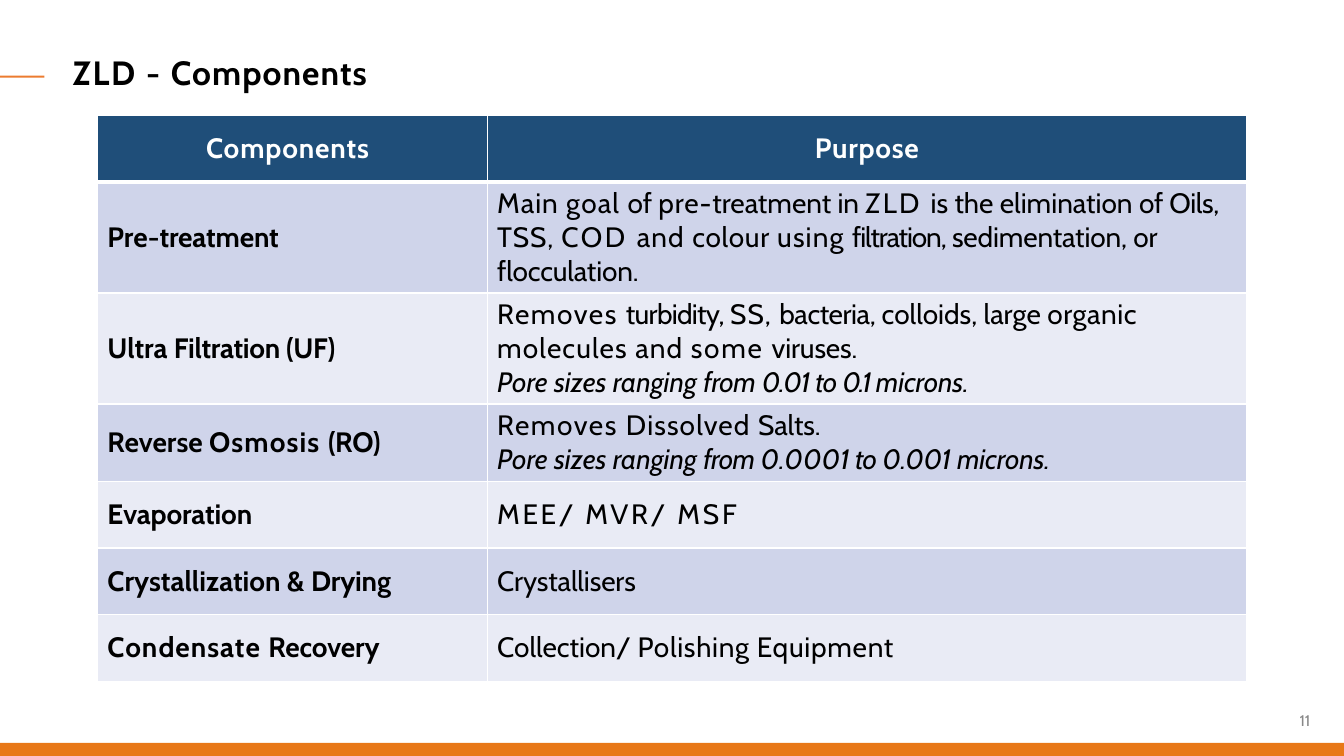
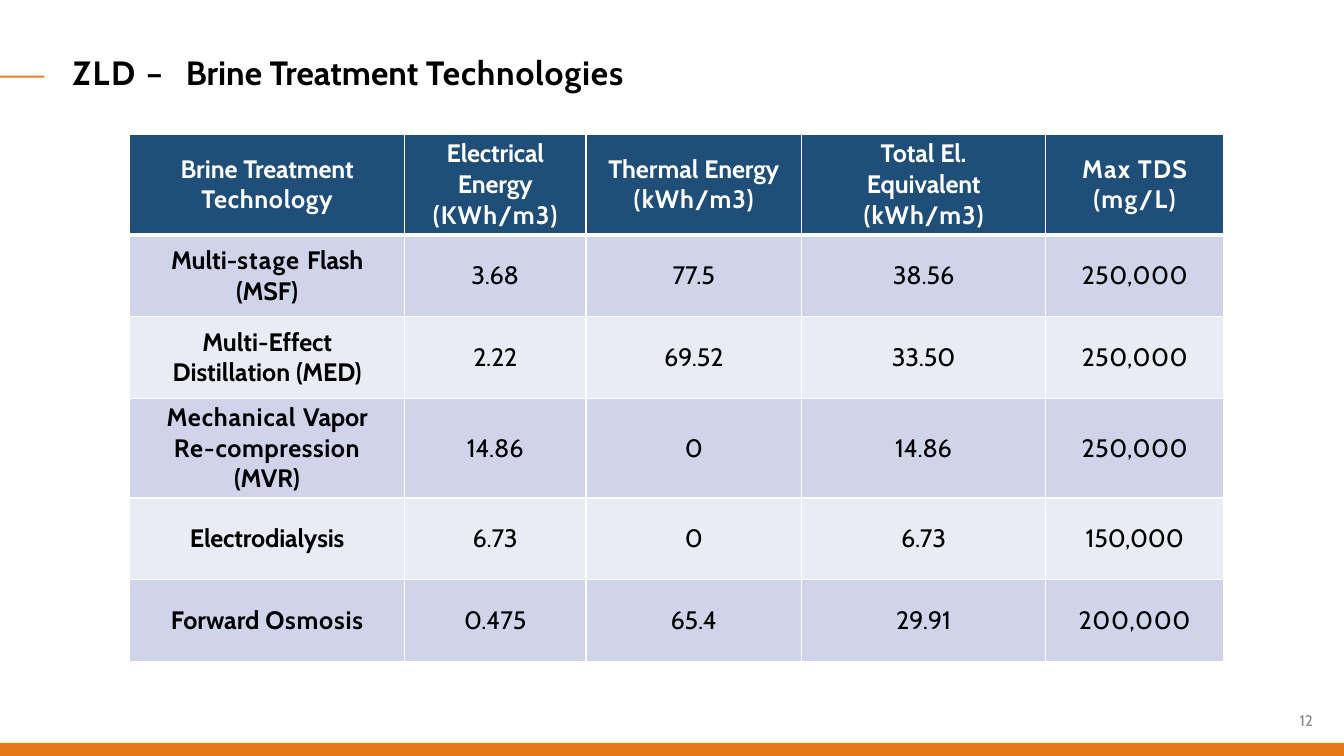
"""Build two slides on zero liquid discharge: components and brine treatment."""
from dataclasses import dataclass
from typing import NamedTuple

from lxml.etree import SubElement
from pptx import Presentation
from pptx.dml.color import RGBColor
from pptx.enum.shapes import MSO_SHAPE
from pptx.enum.text import MSO_ANCHOR, PP_ALIGN
from pptx.oxml.ns import qn
from pptx.util import Inches, Pt


@dataclass(frozen=True)
class Theme:
    """Colours, font and type sizes of the deck."""
    font: str = "Cabin"
    ink: str = "000000"
    paper: str = "FFFFFF"
    header: str = "1F4E79"
    bands: tuple[str, str] = ("CFD4EA", "E9EBF5")
    footer_band: str = "E87817"
    title_dash: str = "EC7C30"
    number: str = "888888"
    title_size: int = 24
    number_size: int = 11
    rule: int = 1
    header_rule: int = 3


THEME = Theme()
SLIDE_WIDTH, SLIDE_HEIGHT = Inches(13.33), Inches(7.5)
Runs = tuple[tuple[str, float], ...]


class Line(NamedTuple):
    """One paragraph: runs of text with their letter spacing in points."""
    runs: Runs
    italic: bool = False


Cell = tuple[Line, ...]


class Column(NamedTuple):
    """A table column, with lengths in percent of the slide width."""
    width: float
    inset: tuple[float, float] = (0, 0)
    header_inset: tuple[float, float] = (0, 0)
    align: PP_ALIGN = PP_ALIGN.CENTER
    bold: bool = False


class Row(NamedTuple):
    """A table row, with its height in percent of the slide height."""
    height: float
    cells: tuple[Cell, ...]


@dataclass(frozen=True)
class Page:
    """One slide: its title and the table below it."""
    number: int
    title: Line
    left: float
    top: float
    size: int
    columns: tuple[Column, ...]
    rows: tuple[Row, ...]


def across(percent: float) -> int:
    """Return a share of the slide width."""
    return round(SLIDE_WIDTH * percent / 100)


def down(percent: float) -> int:
    """Return a share of the slide height."""
    return round(SLIDE_HEIGHT * percent / 100)


def line(*runs: tuple[str, float], italic: bool = False) -> Line:
    """Gather runs into one paragraph."""
    return Line(runs, italic)


def cell(*runs: tuple[str, float]) -> Cell:
    """Gather runs into a cell of one paragraph."""
    return (line(*runs),)


def write(frame, lines: Cell, *, size: int, color: str, bold: bool = False,
          align: PP_ALIGN = PP_ALIGN.LEFT) -> None:
    """Fill a text frame with formatted paragraphs."""
    frame.word_wrap = True
    for index, content in enumerate(lines):
        paragraph = frame.add_paragraph() if index else frame.paragraphs[0]
        paragraph.alignment = align
        for text, spacing in content.runs:
            run = paragraph.add_run()
            run.text = text
            run.font.name = THEME.font
            run.font.size = Pt(size)
            run.font.bold = bold
            run.font.italic = content.italic
            run.font.color.rgb = RGBColor.from_string(color)
            run.font._element.set("spc", str(round(spacing * 100)))


def clear_insets(frame) -> None:
    """Remove the inner margins of a text frame and align it to the top."""
    frame.margin_left = frame.margin_right = 0
    frame.margin_top = frame.margin_bottom = 0
    frame.vertical_anchor = MSO_ANCHOR.TOP


def add_band(slide, top: float, width: float, height: float, color: str) -> None:
    """Draw a plain band from the left edge of the slide."""
    band = slide.shapes.add_shape(
        MSO_SHAPE.RECTANGLE, 0, down(top), across(width), down(height))
    band.shadow.inherit = False
    band.fill.solid()
    band.fill.fore_color.rgb = RGBColor.from_string(color)
    band.line.fill.background()


def add_frame(slide, page: Page) -> None:
    """Draw the bands, the title and the slide number."""
    add_band(slide, 98.27, 100, 1.73, THEME.footer_band)
    add_band(slide, 10, 3.3, 0.27, THEME.title_dash)
    title = slide.shapes.title
    title.left, title.top = across(5.4), down(6.8)
    title.width, title.height = across(64.5), down(5.6)
    clear_insets(title.text_frame)
    write(title.text_frame, (page.title,), size=THEME.title_size,
          color=THEME.ink, bold=True)
    number = slide.shapes.add_textbox(across(96.7), down(94), across(1.7), down(2.8))
    clear_insets(number.text_frame)
    write(number.text_frame, cell((str(page.number), -0.2)),
          size=THEME.number_size, color=THEME.number)


def set_borders(target, top: int, bottom: int) -> None:
    """Give a table cell its white borders ahead of its fill."""
    properties = target._tc.get_or_add_tcPr()
    widths = {"a:lnL": THEME.rule, "a:lnR": THEME.rule, "a:lnT": top, "a:lnB": bottom}
    for tag, width in widths.items():
        border = SubElement(properties, qn(tag), w=str(Pt(width)))
        fill = SubElement(border, qn("a:solidFill"))
        SubElement(fill, qn("a:srgbClr"), val=THEME.paper)


def add_grid(slide, page: Page) -> None:
    """Draw the table with its header and banded rows."""
    table = slide.shapes.add_table(
        len(page.rows), len(page.columns), across(page.left), down(page.top),
        across(sum(column.width for column in page.columns)),
        down(sum(row.height for row in page.rows))).table
    for position, column in enumerate(page.columns):
        table.columns[position].width = across(column.width)
    for level, row in enumerate(page.rows):
        table.rows[level].height = down(row.height)
        is_header = level == 0
        fill = THEME.header if is_header else THEME.bands[(level - 1) % 2]
        for position, (column, lines) in enumerate(zip(page.columns, row.cells)):
            target = table.cell(level, position)
            set_borders(target,
                        THEME.header_rule if level == 1 else THEME.rule,
                        THEME.header_rule if is_header else THEME.rule)
            target.fill.solid()
            target.fill.fore_color.rgb = RGBColor.from_string(fill)
            inset = column.header_inset if is_header else column.inset
            target.margin_left, target.margin_right = map(across, inset)
            target.margin_top = target.margin_bottom = 0
            target.vertical_anchor = MSO_ANCHOR.MIDDLE
            write(target.text_frame, lines, size=page.size,
                  color=THEME.paper if is_header else THEME.ink,
                  bold=is_header or column.bold,
                  align=PP_ALIGN.CENTER if is_header else column.align)


COMPONENTS = Page(
    number=11,
    title=line(("ZLD ", 1.2), ("- ", 1.1), ("Components", 0.8)),
    left=7.25, top=15.3, size=20,
    columns=(
        Column(29, (0.75, 0), (0, 0.7), PP_ALIGN.LEFT, True),
        Column(56.5, (0.75, 0), align=PP_ALIGN.LEFT),
    ),
    rows=(
        Row(8.8, (cell(("Components", 0.6)), cell(("Purpose", 0.5)))),
        Row(14.67, (
            cell(("Pre-", 0), ("treatment", -0.1)),
            cell(("Main ", 0.7), ("goal ", 0.8), ("of ", 0), ("pre-", 0.6),
                 ("treatment ", 0), ("in ", -0.2), ("ZLD ", 1.7),
                 ("is the elimination ", 0), ("of ", -0.2), ("Oils, ", -0.3),
                 ("TSS, ", 0.6), ("COD ", 1.8), ("and ", 0.8), ("colour ", 0.5),
                 ("using ", 0.8), ("filtration, ", -0.8),
                 ("sedimentation, ", -0.1), ("or ", 0), ("flocculation.", -0.1)))),
        Row(14.67, (
            cell(("Ultra ", 0), ("Filtration (UF)", -0.2)),
            (line(("Removes ", 1.1), ("turbidity, ", -0.5), ("SS, ", 0.7),
                  ("bacteria, ", -0.3), ("colloids, large ", 0), ("organic ", 0.4),
                  ("molecules and ", 0.8), ("some ", 1.2), ("viruses.", -0.1)),
             line(("Pore sizes ranging ", 0), ("from ", -0.3), ("0.01 ", -0.9),
                  ("to ", -0.8), ("0.1 ", -1.6), ("microns.", -0.1), italic=True)))),
        Row(10.27, (
            cell(("Reverse ", 0), ("Osmosis ", 0.8), ("(RO)", -0.2)),
            (line(("Removes ", 1.1), ("Dissolved ", 0.8), ("Salts.", -0.1)),
             line(("Pore sizes ranging ", 0), ("from ", -0.5), ("0.0001", -0.1),
                  (" to ", -0.7), ("0.001 ", -0.4), ("microns.", -0.1), italic=True)))),
        Row(8.8, (cell(("Evaporation", -0.1)),
                  cell(("MEE/ MVR/ ", 1.9), ("MSF", 2)))),
        Row(8.8, (cell(("Crystallization & ", 0), ("Drying", -0.1)),
                  cell(("Crystallisers", -0.1)))),
        Row(8.8, (cell(("Condensate ", 0.7), ("Recovery", -0.1)),
                  cell(("Collection/ ", 0), ("Polishing Equipment", 0.5)))),
    ),
)

BRINE_TREATMENT = Page(
    number=12,
    title=line(("ZLD ", 1.2), ("– ", 5.5), ("Brine Treatment ", 0), ("Technologies", 0.6)),
    left=9.65, top=17.75, size=18,
    columns=(
        Column(20.45, (2.1, 2.1), (2.1, 2.1), bold=True),
        Column(13.5, header_inset=(1.95, 1.95)),
        Column(16.05),
        Column(18.15, header_inset=(4.28, 4.28)),
        Column(13.25),
    ),
    rows=(
        Row(13.33, (
            (line(("Brine ", 0), ("Treatment", -0.1)), line(("Technology", 0.5))),
            cell(("Electrical Energy ", -0.1), ("(KWh/m3)", 0.9)),
            (line(("Thermal ", 0), ("Energy", -0.1)), line(("(kWh/m3)", 0.8))),
            (line(("Total ", 0), ("El.", -0.2)),
             line(("Equivalent ", -0.1), ("(kWh/m3)", 0.8))),
            (line(("Max TDS", 0.8)), line(("(mg/L)", 1.1))))),
        Row(10.8, (
            cell(("Multi-", 0), ("stage ", 0.8), ("Flash (MSF)", -0.1)),
            cell(("3.68", -0.2)), cell(("77.5", -0.2)),
            cell(("38.56", -0.1)), cell(("250,000", 0.3)))),
        Row(10.8, (
            (line(("Multi-", 0), ("Effect", -0.1)),
             line(("Distillation ", 0), ("(MED)", -0.1))),
            cell(("2.22", -0.2)), cell(("69.52", -0.1)),
            cell(("33.50", -0.1)), cell(("250,000", 0.3)))),
        Row(13.2, (
            cell(("Mechanical ", 0.6), ("Vapor ", -0.1), ("Re-", 0.7),
                 ("compression ", 0.4), ("(MVR)", -0.1)),
            cell(("14.86", -0.1)), cell(("0", 0.9)),
            cell(("14.86", -0.1)), cell(("250,000", 0.3)))),
        Row(10.8, (
            cell(("Electrodialysis", -0.1)),
            cell(("6.73", -0.2)), cell(("0", 0.9)),
            cell(("6.73", -0.2)), cell(("150,000", -0.1)))),
        Row(10.8, (
            cell(("Forward ", 0), ("Osmosis", 0.6)),
            cell(("0.475", -0.1)), cell(("65.4", -0.2)),
            cell(("29.91", -0.1)), cell(("200,000", 0.5)))),
    ),
)


def main() -> None:
    """Build and save the deck."""
    deck = Presentation()
    deck.slide_width, deck.slide_height = SLIDE_WIDTH, SLIDE_HEIGHT
    title_only = deck.slide_layouts[5]
    for page in (COMPONENTS, BRINE_TREATMENT):
        slide = deck.slides.add_slide(title_only)
        add_frame(slide, page)
        add_grid(slide, page)
    deck.save("out.pptx")


if __name__ == "__main__":
    main()
